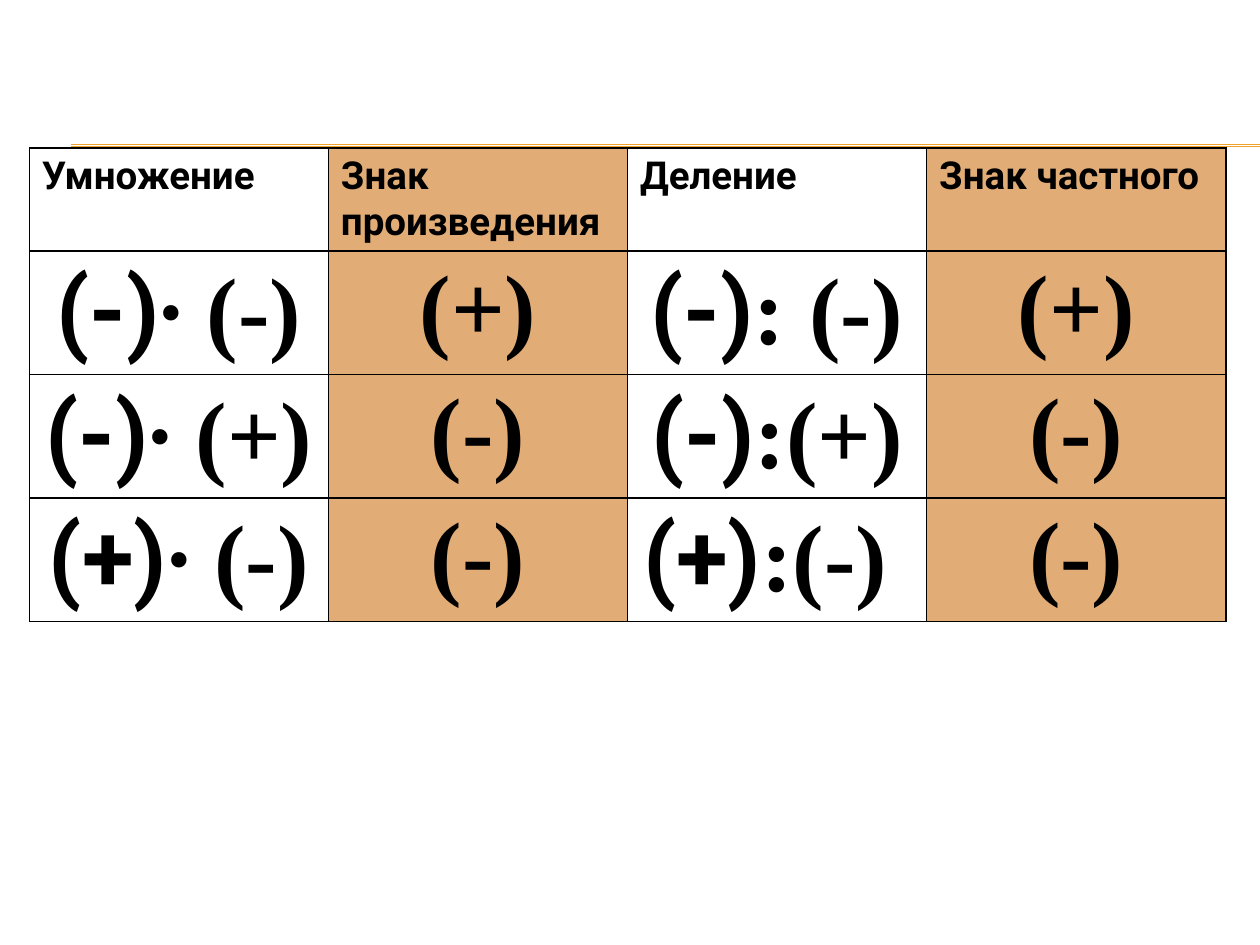
"""Build a slide with the sign rules for multiplication and division."""
from lxml.etree import SubElement
from pptx import Presentation
from pptx.dml.color import RGBColor
from pptx.enum.shapes import MSO_CONNECTOR
from pptx.enum.text import PP_ALIGN
from pptx.oxml import parse_xml
from pptx.oxml.ns import nsdecls, qn
from pptx.util import Cm, Pt

HEADS = ["Умножение", "Знак произведения", "Деление", "Знак частного"]
RULES = [
    [("(-)", "∙ (-)"), "(+)", ("(-)", ": (-)"), "(+)"],
    [("(-)", "∙ (+) "), "(-)", ("(-)", ":(+) "), "(-)"],
    [("(+)", "∙ (-)"), "(-)", ("(+)", ":(-) "), "(-)"],
]
COLORS = {"text": "000000", "sign": "E2AC76", "rule": "F0A22E", "edge": "000000"}
SANS, SERIF = "Roboto", "Times New Roman"
WIDE, HIGH = 25.4, 19.05
LEFT, TOP, COL = 0.59, 2.98, 6.03
ROWS = [2.06, 2.49, 2.49, 2.49]


def tint(key):
    return RGBColor.from_string(COLORS[key])


def add_rule(slide, top):
    line = slide.shapes.add_connector(
        MSO_CONNECTOR.STRAIGHT, Cm(1.43), Cm(top), Cm(WIDE), Cm(top))
    line.line.color.rgb = tint("rule")
    line.line.width = Pt(0.75)
    SubElement(line._element.spPr, qn("a:effectLst"))


def add_edges(cell):
    props = cell._tc.get_or_add_tcPr()
    for spot, side in enumerate(("lnL", "lnR", "lnT", "lnB")):
        props.insert(spot, parse_xml(
            f'<a:{side} {nsdecls("a")} w="{Pt(1)}"><a:solidFill>'
            f'<a:srgbClr val="{COLORS["edge"]}"/></a:solidFill></a:{side}>'))


def fill_cell(cell, parts, size, align, shade):
    if shade:
        cell.fill.solid()
        cell.fill.fore_color.rgb = tint("sign")
    else:
        cell.fill.background()
    add_edges(cell)
    para = cell.text_frame.paragraphs[0]
    para.alignment = align
    for text, face in parts:
        run = para.add_run()
        run.text = text
        font = run.font
        font.name, font.size, font.bold = face, Pt(size), True
        font.color.rgb = tint("text")


def main():
    deck = Presentation()
    deck.slide_width, deck.slide_height = Cm(WIDE), Cm(HIGH)
    slide = deck.slides.add_slide(deck.slide_layouts[6])
    for top in (2.92, 2.95):
        add_rule(slide, top)

    table = slide.shapes.add_table(
        len(ROWS), len(HEADS), Cm(LEFT), Cm(TOP),
        Cm(COL * len(HEADS)), Cm(sum(ROWS))).table
    table.first_row = table.horz_banding = False
    for col in table.columns:
        col.width = Cm(COL)
    for row, high in zip(table.rows, ROWS):
        row.height = Cm(high)

    for c, head in enumerate(HEADS):
        shade = c % 2 == 1
        fill_cell(table.cell(0, c), [(head, SANS)], 22, PP_ALIGN.LEFT, shade)
        for r, rule in enumerate(RULES, 1):
            item = rule[c]
            parts = [(item, SERIF)] if shade else zip(item, (SANS, SERIF))
            fill_cell(table.cell(r, c), parts, 54, PP_ALIGN.CENTER, shade)
    deck.save("out.pptx")


if __name__ == "__main__":
    main()
